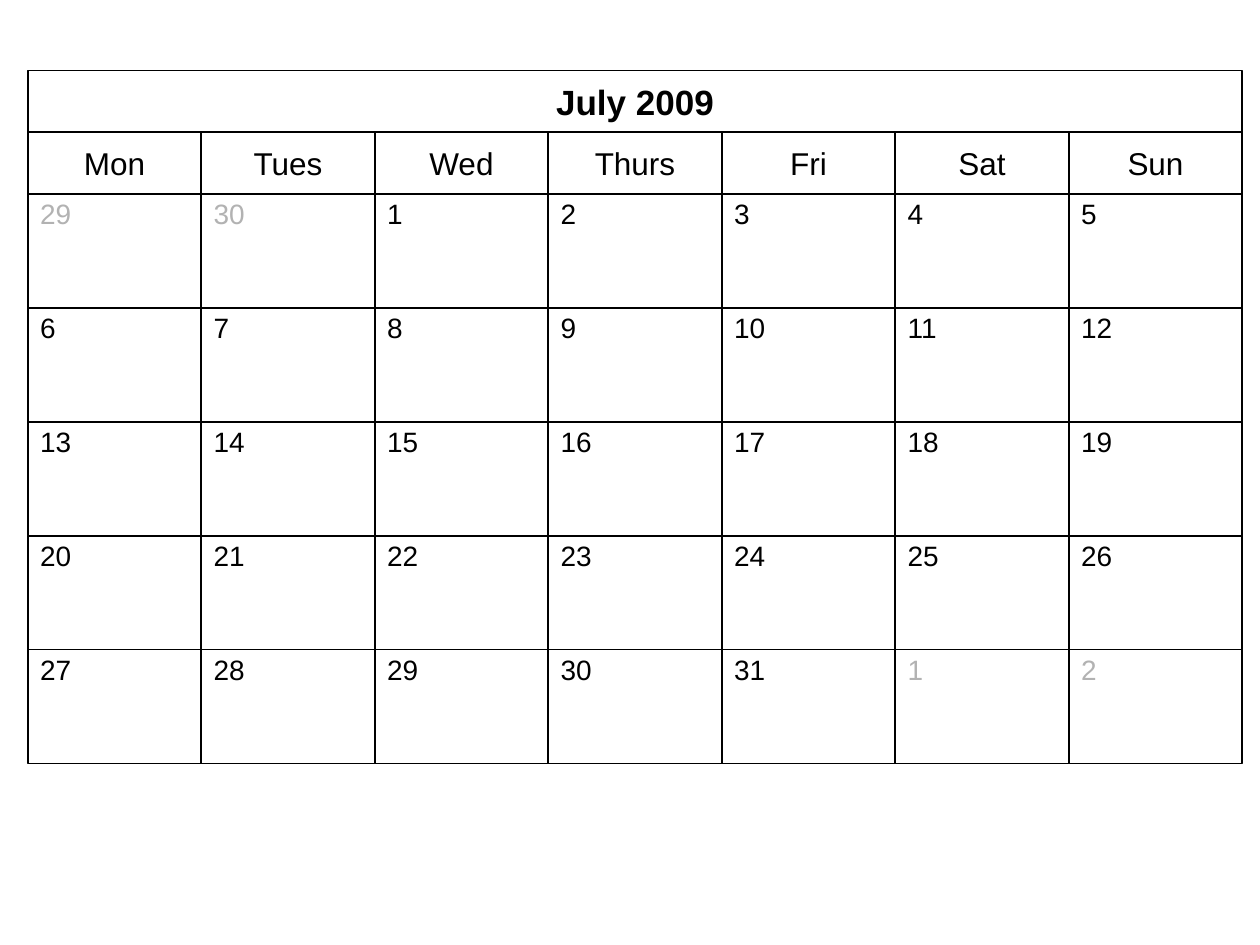
from pptx import Presentation
from pptx.dml.color import RGBColor
from pptx.enum.shapes import MSO_SHAPE as Shape
from pptx.enum.text import MSO_ANCHOR as Anchor, MSO_AUTO_SIZE as AutoSize, PP_ALIGN as Align
from pptx.util import Inches, Pt

BLACK = RGBColor(0x00, 0x00, 0x00)
WHITE = RGBColor(0xFF, 0xFF, 0xFF)
GREY = RGBColor(0xB2, 0xB2, 0xB2)

WEEKDAYS = ["Mon", "Tues", "Wed", "Thurs", "Fri", "Sat", "Sun"]
DAYS = [29, 30, *range(1, 32), 1, 2]
DAYS_BEFORE, DAYS_IN_MONTH = 2, 31

LEFT, TOP = Inches(0.22), Inches(0.56)
COLUMN = Inches(9.64) / len(WEEKDAYS)
HEADER_ROW = Inches(0.49)
WEEK_ROW = Inches(4.52) / 5


def format_cell(box, text, size, color=BLACK, align=Align.CENTER, anchor=Anchor.MIDDLE):
    box.fill.solid()
    box.fill.fore_color.rgb = WHITE
    box.line.color.rgb = BLACK
    box.line.width = Pt(1)
    frame = box.text_frame
    frame.word_wrap = True
    frame.auto_size = AutoSize.NONE
    frame.vertical_anchor = anchor
    frame.margin_left = frame.margin_right = Inches(0.1)
    frame.margin_top = frame.margin_bottom = Inches(0.02)
    para = frame.paragraphs[0]
    para.text = text
    para.alignment = align
    para.font.name = "Arial"
    para.font.size = Pt(size)
    para.font.color.rgb = color


def add_cell(column, top, height):
    box = page.shapes.add_shape(
        Shape.RECTANGLE, int(LEFT + column * COLUMN), int(top), int(COLUMN), int(height))
    box.shadow.inherit = False
    return box


deck = Presentation()
deck.slide_width, deck.slide_height = Inches(10), Inches(7.5)
page = deck.slides.add_slide(deck.slide_layouts[5])

month = page.shapes.title
month.left, month.top = LEFT, TOP
month.width, month.height = int(COLUMN * len(WEEKDAYS)), HEADER_ROW
format_cell(month, "July 2009", 20)
month.text_frame.paragraphs[0].font.bold = True

for column, weekday in enumerate(WEEKDAYS):
    format_cell(add_cell(column, TOP + HEADER_ROW, HEADER_ROW), weekday, 18)

for index, day in enumerate(DAYS):
    week, column = divmod(index, len(WEEKDAYS))
    in_month = DAYS_BEFORE <= index < DAYS_BEFORE + DAYS_IN_MONTH
    box = add_cell(column, TOP + 2 * HEADER_ROW + week * WEEK_ROW, WEEK_ROW)
    format_cell(box, str(day), 16, BLACK if in_month else GREY, Align.LEFT, Anchor.TOP)

deck.save("out.pptx")
